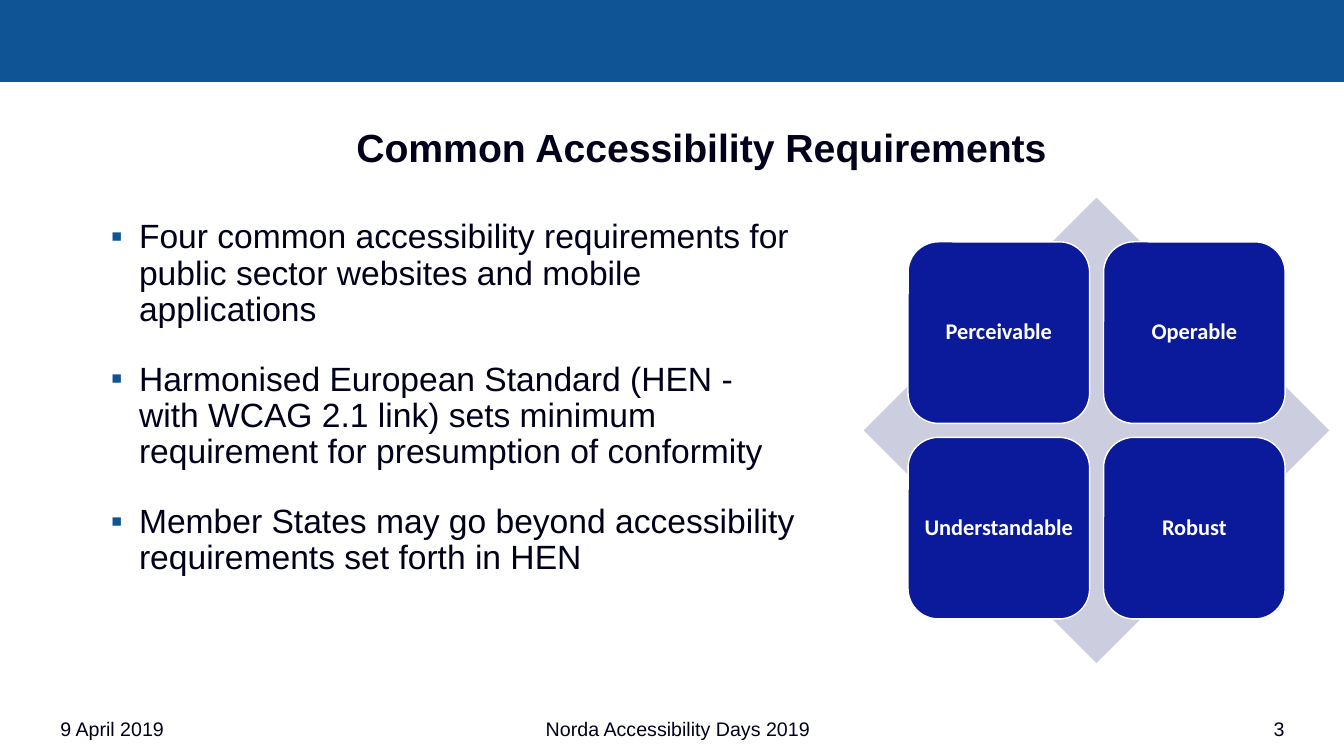
from dataclasses import dataclass

from lxml.etree import SubElement
from pptx import Presentation
from pptx.dml.color import RGBColor
from pptx.enum.shapes import MSO_SHAPE
from pptx.enum.text import MSO_ANCHOR, MSO_AUTO_SIZE, PP_ALIGN
from pptx.oxml.ns import qn
from pptx.util import Cm, Pt

TITLE = "Common Accessibility Requirements"
POINTS = [
    "Four common accessibility requirements for public sector websites and mobile applications",
    "Harmonised European Standard (HEN - with WCAG 2.1 link) sets minimum requirement for presumption of conformity",
    "Member States may go beyond accessibility requirements set forth in HEN",
]
TILES = [["Perceivable", "Operable"], ["Understandable", "Robust"]]
# text, left, width, alignment
FOOTER = [
    ("9 April 2019", 1.27, 5.92, PP_ALIGN.LEFT),
    ("Norda Accessibility Days 2019", 8.46, 17.25, PP_ALIGN.CENTER),
    ("3", 26.7, 5.92, PP_ALIGN.RIGHT),
]


@dataclass(frozen=True)
class Theme:
    bar: str = "0F5494"
    ink: str = "00001B"
    tile: str = "0B1A9A"
    diamond: str = "CCCDDE"
    white: str = "FFFFFF"
    font: str = "Arial"
    label_font: str = "Calibri"
    title: int = 28
    body: int = 24
    label: int = 16
    footer: int = 14


theme = Theme()


def rgb(code):
    return RGBColor.from_string(code)


def place(shape, left, top, width, height):
    shape.left, shape.top = Cm(left), Cm(top)
    shape.width, shape.height = Cm(width), Cm(height)


def style(para, size, color=theme.ink, font=theme.font, bold=False):
    for run in para.runs:
        run.font.size = Pt(size)
        run.font.name = font
        run.font.bold = bold
        run.font.color.rgb = rgb(color)


def draw(slide, kind, box, fill, line=None, width=1):
    shape = slide.shapes.add_shape(kind, *map(Cm, box))
    shape.shadow.inherit = False
    shape.fill.solid()
    shape.fill.fore_color.rgb = rgb(fill)
    if line:
        shape.line.color.rgb = rgb(line)
        shape.line.width = Pt(width)
    else:
        shape.line.fill.background()
    return shape


def add_bullet(para):
    props = para._p.get_or_add_pPr()
    props.set("marL", str(Cm(1.98)))
    props.set("indent", str(Cm(-0.71)))
    color = SubElement(props, qn("a:buClr"))
    SubElement(color, qn("a:srgbClr"), val=theme.bar)
    SubElement(props, qn("a:buFont"), typeface=theme.font)
    SubElement(props, qn("a:buChar"), char="▪")


def add_title(slide):
    title = slide.shapes.title
    place(title, 2.74, 3.12, 29.87, 2.26)
    frame = title.text_frame
    frame.text = TITLE
    frame.auto_size = MSO_AUTO_SIZE.NONE
    frame.vertical_anchor = MSO_ANCHOR.TOP
    para = frame.paragraphs[0]
    para.alignment = PP_ALIGN.CENTER
    para.line_spacing = 0.9
    style(para, theme.title, bold=True)


def add_points(slide):
    body = slide.placeholders[1]
    place(body, 1.27, 5.41, 19.1, 12.55)
    frame = body.text_frame
    frame.text = "\n".join(POINTS)
    frame.auto_size = MSO_AUTO_SIZE.NONE
    for i, para in enumerate(frame.paragraphs):
        para.level = 1
        add_bullet(para)
        para.line_spacing = 0.9
        para.space_before = Pt(6 if i else 0)
        para.space_after = Pt(18)
        style(para, theme.body)


def add_matrix(slide, left, top, size):
    """Draw a diamond with a two by two grid of tiles centred on it."""
    draw(slide, MSO_SHAPE.DIAMOND, (left, top, size, size), theme.diamond)
    side, step = 0.39 * size, 0.42 * size
    edge = (size - side - step) / 2
    for r, row in enumerate(TILES):
        for c, text in enumerate(row):
            box = (left + edge + c * step, top + edge + r * step, side, side)
            tile = draw(slide, MSO_SHAPE.ROUNDED_RECTANGLE, box, theme.tile, theme.white)
            frame = tile.text_frame
            frame.text = text
            frame.word_wrap = True
            frame.vertical_anchor = MSO_ANCHOR.MIDDLE
            frame.margin_left = frame.margin_right = Cm(0.15)
            para = frame.paragraphs[0]
            para.alignment = PP_ALIGN.CENTER
            para.line_spacing = 0.9
            style(para, theme.label, theme.white, theme.label_font, True)


def add_footer(slide):
    for text, left, width, align in FOOTER:
        box = slide.shapes.add_textbox(Cm(left), Cm(17.93), Cm(width), Cm(1))
        frame = box.text_frame
        frame.text = text
        frame.word_wrap = True
        para = frame.paragraphs[0]
        para.alignment = align
        style(para, theme.footer)


def main():
    deck = Presentation()
    deck.slide_width, deck.slide_height = Cm(33.87), Cm(19.05)
    slide = deck.slides.add_slide(deck.slide_layouts[1])
    draw(slide, MSO_SHAPE.RECTANGLE, (0, 0, 33.87, 2.06), theme.bar, theme.bar, 0.5)
    add_title(slide)
    add_points(slide)
    add_matrix(slide, 21.77, 4.98, 11.73)
    add_footer(slide)
    deck.save("out.pptx")


if __name__ == "__main__":
    main()
